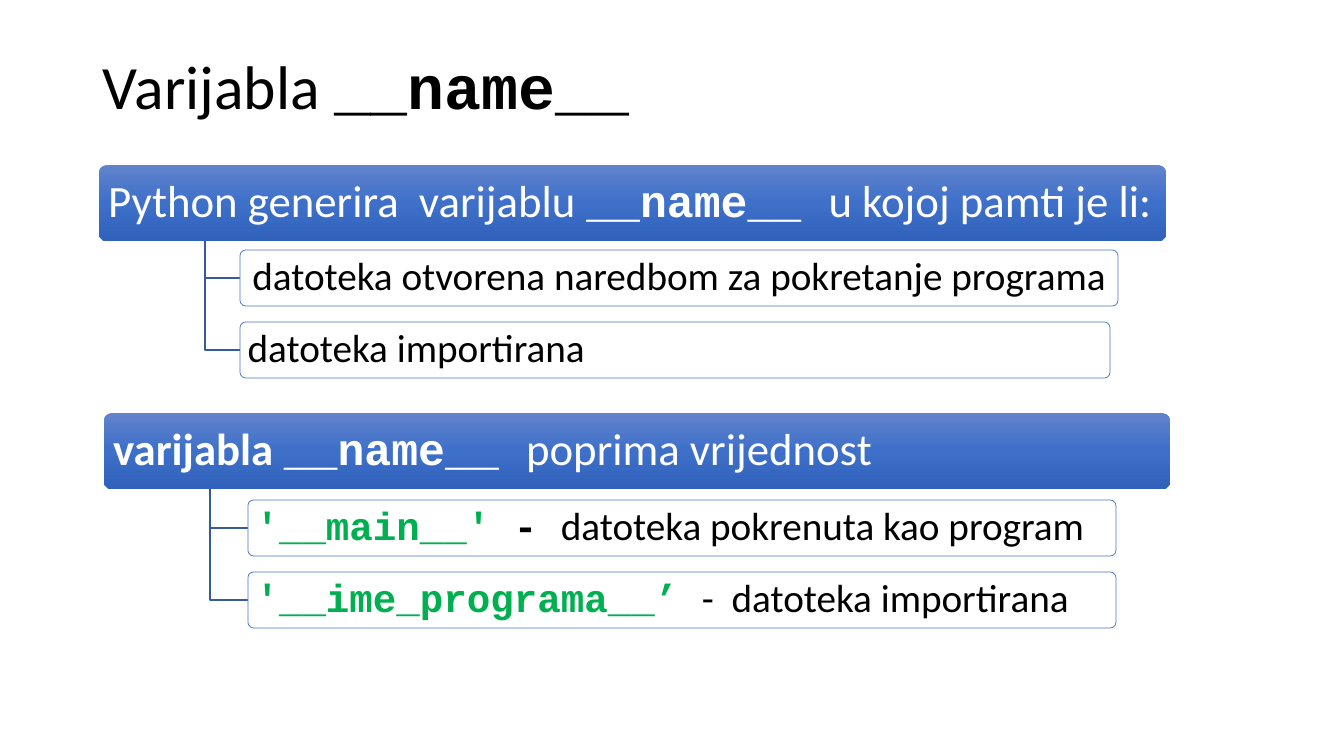
from copy import deepcopy
from lxml.etree import SubElement
from pptx import Presentation
from pptx.dml.color import RGBColor
from pptx.enum.shapes import MSO_SHAPE
from pptx.enum.text import MSO_ANCHOR, MSO_AUTO_SIZE, PP_ALIGN
from pptx.oxml.ns import qn
from pptx.util import Pt

SANS, MONO = "Calibri", "Courier New"
HEX = {"black": "000000", "white": "FFFFFF", "green": "00B050",
       "edge": "4472C4", "link": "365B9D"}
SHADES = [(0, "6183CB"), (0.5, "3E70CA"), (1, "3062BB")]

# A run is (text, font, bold, colour).
TITLE = [("Varijabla ", SANS, False, "black"), ("__name__", MONO, True, "black")]
# A group is a bar and the boxes that hang from it; frames are in px.
GROUPS = [
    {"bar": (99, 165, 1067, 76),
     "head": [("Python generira  varijablu ", SANS, False, "white"),
              ("__name__ ", MONO, True, "white"),
              ("u kojoj pamti je li:", SANS, False, "white")],
     "left": 240, "top": 250,
     "items": [
         (878, PP_ALIGN.CENTER,
          [("datoteka otvorena naredbom za pokretanje programa", SANS, False, "black")]),
         (870, PP_ALIGN.LEFT, [("datoteka importirana", SANS, False, "black")])]},
    {"bar": (104, 413, 1066, 76),
     "head": [("varijabla ", SANS, True, "white"),
              ("__name__ ", MONO, True, "white"),
              ("poprima vrijednost", SANS, False, "white")],
     "left": 248, "top": 500,
     "items": [
         (868, PP_ALIGN.LEFT, [("'__main__' ", MONO, True, "green"),
                               ("- ", MONO, True, "black"),
                               ("datoteka pokrenuta kao program", SANS, False, "black")]),
         (868, PP_ALIGN.LEFT, [("'__ime_programa__’ ", MONO, True, "green"),
                               ("-  datoteka importirana", SANS, False, "black")])]},
]
BOX_H, STEP = 56, 72


def px(n):
    return round(n * 914400 / 100.8)


def rgb(name):
    return RGBColor.from_string(HEX[name])


def write(shape, runs, size, align=PP_ALIGN.LEFT, inset=(10, 5)):
    frame = shape.text_frame
    frame.word_wrap = True
    frame.auto_size = MSO_AUTO_SIZE.NONE
    frame.vertical_anchor = MSO_ANCHOR.MIDDLE
    frame.margin_left = frame.margin_right = px(inset[0])
    frame.margin_top = frame.margin_bottom = px(inset[1])
    para = frame.paragraphs[0]
    para.alignment, para.line_spacing = align, 0.9
    for text, face, bold, color in runs:
        run = para.add_run()
        run.text = text
        font = run.font
        font.name, font.size, font.bold = face, Pt(size), bold
        font.color.rgb = rgb(color)


def panel(slide, frame):
    shape = slide.shapes.add_shape(MSO_SHAPE.ROUNDED_RECTANGLE, *map(px, frame))
    shape.adjustments[0] = 0.1
    shape.shadow.inherit = False
    return shape


def add_bar(slide, frame, runs):
    bar = panel(slide, frame)
    bar.line.fill.background()
    bar.fill.gradient()
    bar.fill.gradient_angle = 270
    stops = bar.element.spPr.find(qn("a:gradFill")).find(qn("a:gsLst"))
    stops.append(deepcopy(stops[0]))
    for stop, (place, shade) in zip(bar.fill.gradient_stops, SHADES):
        stop.position = place
        stop.color.rgb = RGBColor.from_string(shade)
    write(bar, runs, 32, inset=(7, 4))


def add_box(slide, frame, runs, align):
    box = panel(slide, frame)
    box.fill.solid()
    box.fill.fore_color.rgb = rgb("white")
    tint = box.element.spPr.find(qn("a:solidFill"))[0]
    SubElement(tint, qn("a:alpha")).set("val", "90000")
    box.line.color.rgb = rgb("edge")
    box.line.width = Pt(0.5)
    write(box, runs, 28, align, inset=(6, 4))


def add_elbow(slide, x, y, right, low):
    """Draw a line down from (x, y), then across to (right, low)."""
    pen = slide.shapes.build_freeform(px(x), px(y))
    pen.add_line_segments([(px(x), px(low)), (px(right), px(low))], close=False)
    elbow = pen.convert_to_shape()
    elbow.shadow.inherit = False
    elbow.fill.background()
    elbow.line.color.rgb = rgb("link")
    elbow.line.width = Pt(1)


def main():
    deck = Presentation()
    deck.slide_width, deck.slide_height = px(1344), px(756)
    slide = deck.slides.add_slide(deck.slide_layouts[5])
    title = slide.shapes.title
    title.left, title.top, title.width, title.height = map(px, (93, 40, 1159, 99))
    write(title, TITLE, 44)
    for group in GROUPS:
        x, y, w, h = group["bar"]
        left = group["left"]
        add_bar(slide, group["bar"], group["head"])
        for i, (width, align, runs) in enumerate(group["items"]):
            top = group["top"] + i * STEP
            add_elbow(slide, x + w // 10, y + h, left, top + BOX_H // 2)
            add_box(slide, (left, top, width, BOX_H), runs, align)
    deck.save("out.pptx")


if __name__ == "__main__":
    main()
